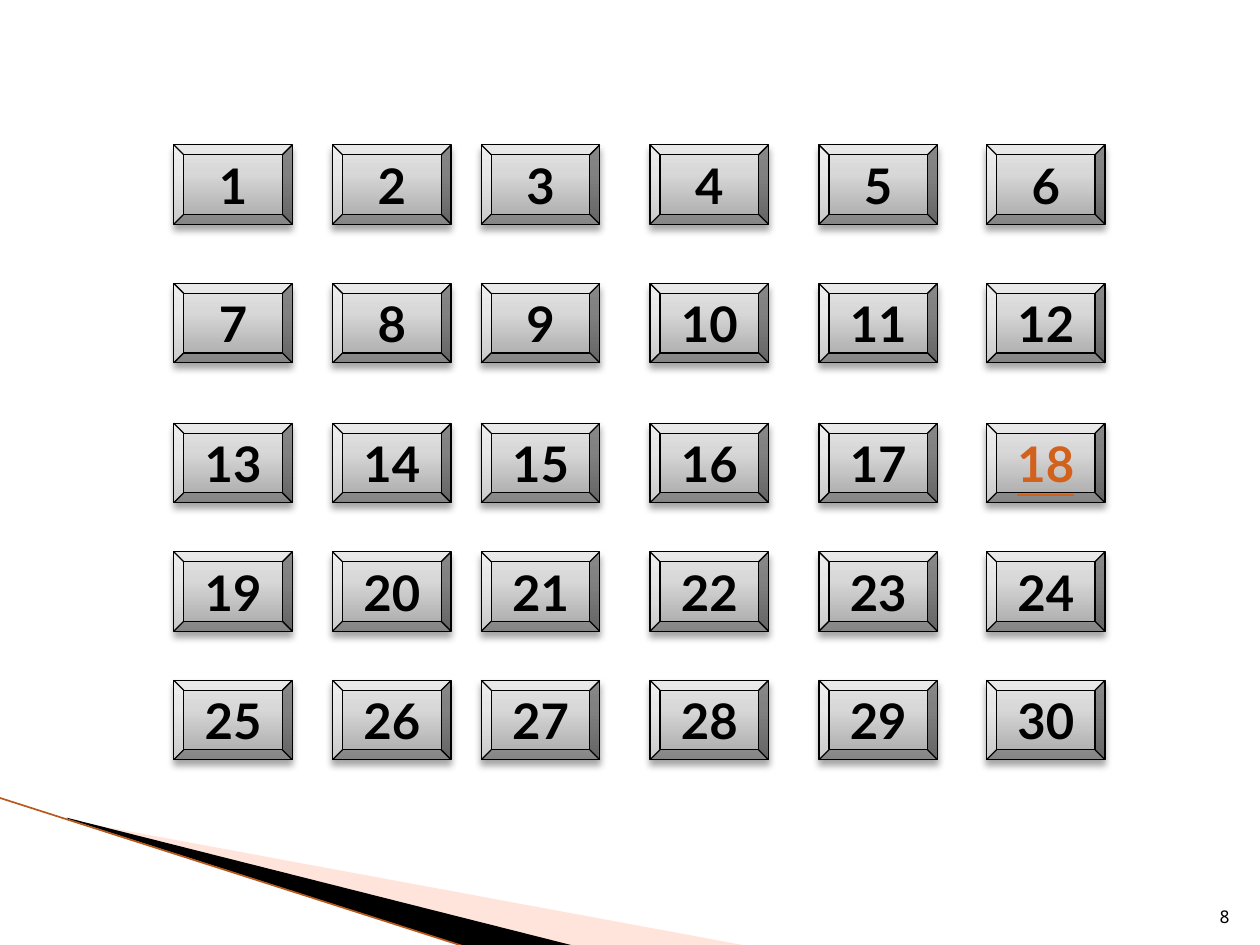
from itertools import product

from lxml import etree
from pptx import Presentation
from pptx.dml.color import RGBColor
from pptx.enum.shapes import MSO_CONNECTOR, MSO_SHAPE
from pptx.enum.text import MSO_ANCHOR, PP_ALIGN
from pptx.oxml import parse_xml
from pptx.oxml.ns import nsdecls, qn
from pptx.util import Inches, Pt

COLORS = {
    "ink": "000000", "link": "D2611C", "peach": "FFBCA5", "edge": "B8581C",
    "dark": "A7A7A7", "middle": "D8D8D8", "light": "E4E4E4",
}
COLUMNS = [1.38, 2.64, 3.82, 5.16, 6.5, 7.83]
ROWS = [1.15, 2.25, 3.36, 4.38, 5.4]
BUTTON_SIZE = (0.94, 0.63)
LINKED_NUMBER = 18
GRADIENT = [(0, "dark"), (65, "middle"), (100, "light")]
WEDGES = [
    ("peach", 40, [(0.55, 6.51), (5.95, 7.51), (4.56, 7.51), (0.55, 6.5)]),
    ("ink", 100, [(0.53, 6.49), (4.57, 7.51), (3.72, 7.52), (0.54, 6.5)]),
]
EDGE_LINE = [(-0.01, 6.33), (3.71, 7.52)]
PAGE_NUMBER = ("8", (9.46, 7.01, 0.4, 0.4))


def rgb(name):
    return RGBColor.from_string(COLORS[name])


def write(shape, text, anchor, align, color, **formats):
    frame = shape.text_frame
    frame.word_wrap = True
    frame.vertical_anchor = anchor
    para = frame.paragraphs[0]
    para.alignment = align
    span = para.add_run()
    span.text = text
    for name, value in formats.items():
        setattr(span.font, name, value)
    span.font.color.rgb = rgb(color)


def add_wedge(page, color, opacity, points):
    corners = [(Inches(x), Inches(y)) for x, y in points]
    builder = page.shapes.build_freeform(*corners[0])
    builder.add_line_segments(corners[1:], close=True)
    wedge = builder.convert_to_shape()
    wedge.shadow.inherit = False
    wedge.fill.solid()
    wedge.fill.fore_color.rgb = rgb(color)
    wedge.line.fill.background()
    if opacity < 100:
        tint = wedge._element.spPr.find(qn("a:solidFill"))[0]
        etree.SubElement(tint, qn("a:alpha")).set("val", str(opacity * 1000))


def add_edge_line(page):
    ends = [Inches(value) for point in EDGE_LINE for value in point]
    line = page.shapes.add_connector(MSO_CONNECTOR.STRAIGHT, *ends)
    line.line.color.rgb = rgb("edge")
    line.line.width = Pt(0.95)
    etree.SubElement(line._element.spPr, qn("a:effectLst"))


def add_button(page, number, left, top):
    place = [Inches(value) for value in (left, top, *BUTTON_SIZE)]
    button = page.shapes.add_shape(MSO_SHAPE.BEVEL, *place)
    button.shadow.inherit = False
    button.line.color.rgb = rgb("ink")
    button.line.width = Pt(0.75)
    stops = "".join(
        f'<a:gs pos="{pos * 1000}"><a:srgbClr val="{COLORS[name]}"/></a:gs>'
        for pos, name in GRADIENT
    )
    outline = button._element.spPr.find(qn("a:ln"))
    outline.addprevious(parse_xml(
        f'<a:gradFill {nsdecls("a")} rotWithShape="1"><a:gsLst>{stops}</a:gsLst>'
        '<a:lin ang="16200000" scaled="0"/></a:gradFill>'
    ))
    button._element.spPr.find(qn("a:effectLst")).append(parse_xml(
        f'<a:outerShdw {nsdecls("a")} blurRad="{Pt(4)}" dist="{Pt(3)}" dir="5400000" '
        f'rotWithShape="0"><a:srgbClr val="{COLORS["ink"]}"><a:alpha val="35000"/>'
        '</a:srgbClr></a:outerShdw>'
    ))
    linked = number == LINKED_NUMBER
    write(button, str(number), MSO_ANCHOR.MIDDLE, PP_ALIGN.CENTER,
          "link" if linked else "ink",
          name="Lato", size=Pt(28), bold=True, underline=linked)


def main():
    """Build a slide with a grid of thirty numbered buttons."""
    deck = Presentation()
    deck.slide_width, deck.slide_height = Inches(10), Inches(7.5)
    page = deck.slides.add_slide(deck.slide_layouts[6])
    for wedge in WEDGES:
        add_wedge(page, *wedge)
    add_edge_line(page)
    for number, (top, left) in enumerate(product(ROWS, COLUMNS), start=1):
        add_button(page, number, left, top)
    text, place = PAGE_NUMBER
    box = page.shapes.add_textbox(*[Inches(value) for value in place])
    write(box, text, MSO_ANCHOR.BOTTOM, PP_ALIGN.RIGHT, "ink",
          name="Noto Sans Mono", size=Pt(10))
    deck.save("out.pptx")


if __name__ == "__main__":
    main()
